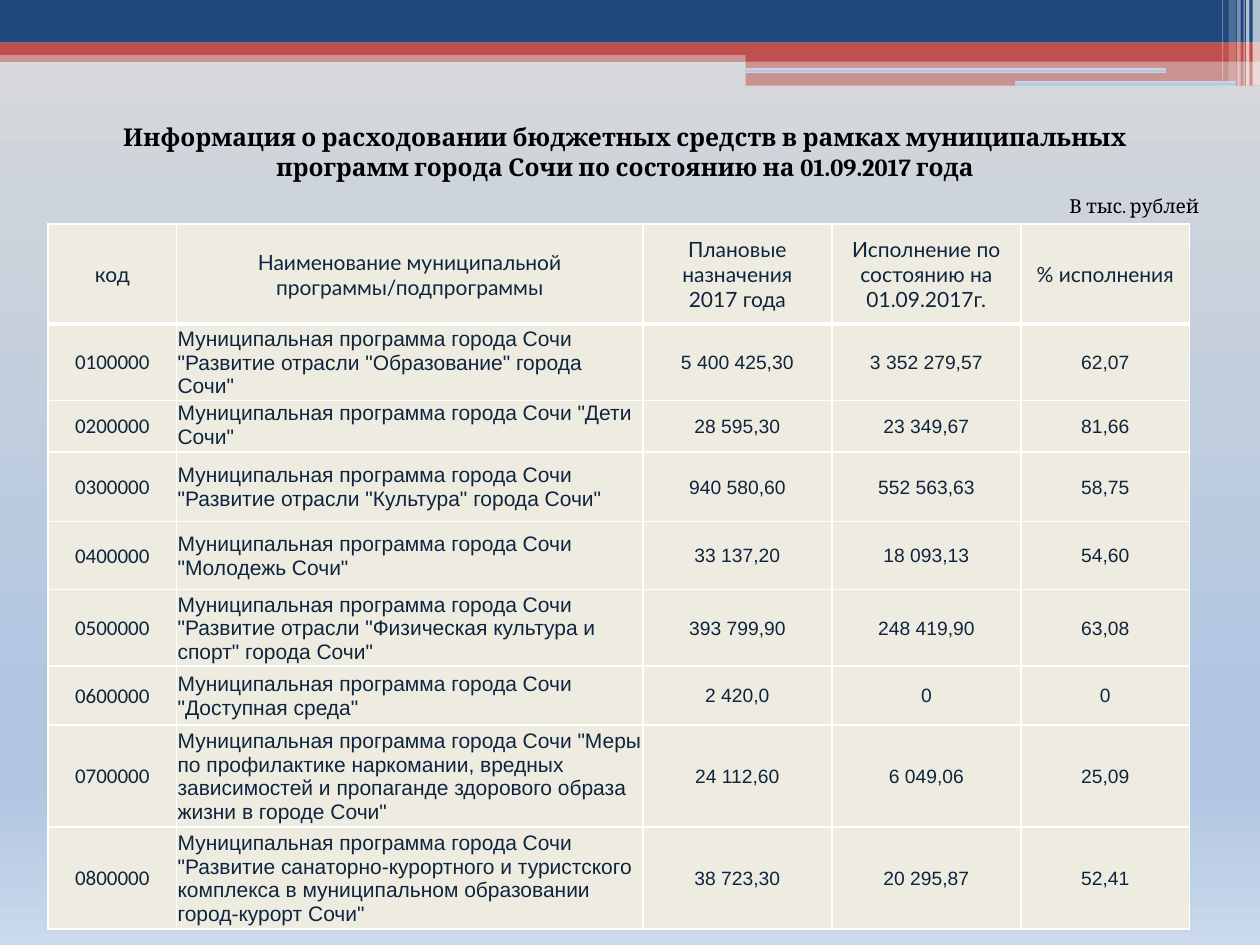
from lxml import etree
from pptx import Presentation
from pptx.dml.color import RGBColor
from pptx.enum.shapes import MSO_SHAPE
from pptx.enum.text import MSO_ANCHOR, MSO_AUTO_SIZE, PP_ALIGN
from pptx.oxml.ns import qn
from pptx.util import Cm, Pt

RECTANGLE, ROUNDED = MSO_SHAPE.RECTANGLE, MSO_SHAPE.ROUNDED_RECTANGLE
LEFT, CENTER = PP_ALIGN.LEFT, PP_ALIGN.CENTER
TOP, MIDDLE = MSO_ANCHOR.TOP, MSO_ANCHOR.MIDDLE
GROW = MSO_AUTO_SIZE.SHAPE_TO_FIT_TEXT

COLORS = {
    "blue": "1F497D", "red": "C0504D", "white": "FFFFFF", "black": "000000",
    "cream": "EEECE1", "navy": "0F243E",
    "grey": "D9D9D9", "sky": "B0C6E1", "pale": "CAD9EB",
}
BACKDROP = [(0, "grey"), (74, "sky"), (83, "sky"), (100, "pale")]

BANDS = [
    (0, 1.02, 25.4, 0.23, "red", 50),
    (0, 0, 25.4, 0.86, "blue", 100),
    (0, 0.86, 25.4, 0.25, "red", 100),
    (15.03, 0.99, 10.37, 0.25, "red", 100),
    (15.03, 1.23, 10.37, 0.5, "red", 50),
]
SLOTS = [(15.01, 1.37, 8.51, 0.09), (20.47, 1.63, 4.45, 0.1)]
STRIPES = [
    (25.25, 0.15, 1.73, 65), (25.12, 0.07, 1.73, 65), (25.07, 0.02, 1.73, 60),
    (24.94, 0.07, 1.73, 40), (24.77, 0.15, 1.63, 20), (24.64, 0.02, 1.63, 30),
]

TITLE = ("Информация о расходовании бюджетных средств в рамках муниципальных "
         "программ города Сочи по состоянию на 01.09.2017 года")
HEADERS = ["код", "Наименование муниципальной программы/подпрограммы",
           "Плановые\vназначения\v2017 года",
           "Исполнение по состоянию на 01.09.2017г.", "% исполнения"]
PROGRAMS = [
    ("0100000", '"Развитие отрасли "Образование" города Сочи"',
     "5 400 425,30", "3 352 279,57", "62,07"),
    ("0200000", '"Дети Сочи"', "28 595,30", "23 349,67", "81,66"),
    ("0300000", '"Развитие отрасли "Культура" города Сочи"',
     "940 580,60", "552 563,63", "58,75"),
    ("0400000", '"Молодежь Сочи"', "33 137,20", "18 093,13", "54,60"),
    ("0500000", '"Развитие отрасли "Физическая культура и спорт" города Сочи"',
     "393 799,90", "248 419,90", "63,08"),
    ("0600000", '"Доступная среда"', "2 420,0", "0", "0"),
    ("0700000", '"Меры по профилактике наркомании, вредных зависимостей и '
     'пропаганде здорового образа жизни в городе Сочи"',
     "24 112,60", "6 049,06", "25,09"),
    ("0800000", '"Развитие санаторно-курортного и туристского комплекса в '
     'муниципальном образовании город-курорт Сочи"',
     "38 723,30", "20 295,87", "52,41"),
]
COLUMN_WIDTHS = [2.59, 9.4, 3.81, 3.81, 3.4]
ROW_HEIGHTS = [2.01, 1.45, 1.04, 1.4, 1.37, 1.45, 1.19, 1.92, 2.01]


def rgb(name):
    """Return the named palette colour."""
    return RGBColor.from_string(COLORS[name])


def fill_backdrop(fill, element):
    """Give a fill the vertical backdrop gradient."""
    fill.gradient()
    fill.gradient_angle = 270
    stops = next(element.iter(qn("a:gsLst")))
    for stop in list(stops):
        stops.remove(stop)
    for position, name in BACKDROP:
        stop = etree.SubElement(stops, qn("a:gs"), pos=str(position * 1000))
        etree.SubElement(stop, qn("a:srgbClr"), val=COLORS[name])


def add_bar(slide, kind, left, top, width, height):
    """Add a flat shape without line or shadow."""
    bar = slide.shapes.add_shape(kind, Cm(left), Cm(top), Cm(width), Cm(height))
    bar.shadow.inherit = False
    bar.line.fill.background()
    return bar


def add_tinted_bar(slide, left, top, width, height, color, opacity):
    """Add a rectangle of one colour at an opacity in percent."""
    bar = add_bar(slide, RECTANGLE, left, top, width, height)
    bar.fill.solid()
    bar.fill.fore_color.rgb = rgb(color)
    if opacity < 100:
        tint = next(bar.element.spPr.iter(qn("a:srgbClr")))
        etree.SubElement(tint, qn("a:alpha"), val=str(opacity * 1000))


def add_banner(slide, left, top):
    """Place the bands, slots and stripes across the top."""
    for x, y, width, height, color, opacity in BANDS:
        add_tinted_bar(slide, left + x, top + y, width, height, color, opacity)
    for x, y, width, height in SLOTS:
        slot = add_bar(slide, ROUNDED, left + x, top + y, width, height)
        fill_backdrop(slot.fill, slot.element)
    for x, width, height, opacity in STRIPES:
        add_tinted_bar(slide, left + x, top, width, height, "white", opacity)


def format_text(frame, font, size, color, align, bold=False):
    """Format every run in a text frame."""
    for para in frame.paragraphs:
        para.alignment = align
        for span in para.runs:
            span.font.name = font
            span.font.size = Pt(size)
            span.font.bold = bold
            span.font.color.rgb = rgb(color)


def place_text(box, text, left, top, width, height):
    """Put text in a box that sits at the given place."""
    box.left, box.top = Cm(left), Cm(top)
    box.width, box.height = Cm(width), Cm(height)
    frame = box.text_frame
    frame.text = text
    frame.word_wrap = True
    frame.auto_size = GROW
    frame.vertical_anchor = TOP
    return frame


def add_heading(slide, left, top, width):
    """Place the title and the unit note below it."""
    title = place_text(slide.shapes.title, TITLE, left, top, width, 1.45)
    format_text(title, "Cambria", 14, "black", CENTER, bold=True)
    note_box = slide.shapes.add_textbox(0, 0, 0, 0)
    note = place_text(note_box, "В тыс. рублей", left + 20.01, top + 1.45, 3.99, 0.74)
    format_text(note, "Cambria", 11, "black", LEFT)


def set_borders(cell, widths):
    """Draw white borders with a width in points for each side."""
    properties = cell._tc.get_or_add_tcPr()
    for index, (side, width) in enumerate(widths.items()):
        line = etree.Element(qn(f"a:ln{side}"), w=str(Pt(width)))
        fill = etree.SubElement(line, qn("a:solidFill"))
        etree.SubElement(fill, qn("a:srgbClr"), val=COLORS["white"])
        properties.insert(index, line)


def fill_cell(cell, text, font, size, align, top_line, bottom_line):
    """Write and format one table cell."""
    cell.text = text
    cell.margin_left = cell.margin_right = cell.margin_top = Cm(0.02)
    cell.margin_bottom = Cm(0)
    cell.vertical_anchor = MIDDLE
    cell.fill.solid()
    cell.fill.fore_color.rgb = rgb("cream")
    format_text(cell.text_frame, font, size, "navy", align)
    set_borders(cell, {"L": 1, "R": 1, "T": top_line, "B": bottom_line})


def add_program_table(slide, left, top):
    """Place the table of programme spending."""
    frame = slide.shapes.add_table(
        len(ROW_HEIGHTS), len(COLUMN_WIDTHS), Cm(left), Cm(top),
        Cm(sum(COLUMN_WIDTHS)), Cm(sum(ROW_HEIGHTS)))
    table = frame.table
    table.horz_banding = False
    for column, width in zip(table.columns, COLUMN_WIDTHS):
        column.width = Cm(width)
    for row, height in zip(table.rows, ROW_HEIGHTS):
        row.height = Cm(height)
    for column, header in enumerate(HEADERS):
        fill_cell(table.cell(0, column), header, "Lato", 12, CENTER, 1, 3)
    styles = [("Calibri", 12, CENTER), ("Arial", 12, LEFT)] + [("Arial", 11, CENTER)] * 3
    for row, (code, name, *amounts) in enumerate(PROGRAMS, 1):
        values = [code, f"Муниципальная программа города Сочи {name}", *amounts]
        if code == "0600000":
            values[1] = f"Муниципальная программа города Сочи {name}"
        for column, (value, style) in enumerate(zip(values, styles)):
            fill_cell(table.cell(row, column), value, *style, 3 if row == 1 else 1, 1)
    table.cell(2, 1).vertical_anchor = TOP


def main():
    """Build and save the deck."""
    deck = Presentation()
    deck.slide_width, deck.slide_height = Cm(25.4), Cm(19.05)
    slide = deck.slides.add_slide(deck.slide_layouts.get_by_name("Title Only"))
    fill_backdrop(slide.background.fill, slide.element)
    add_banner(slide, 0, 0)
    add_program_table(slide, 0.97, 4.52)
    add_heading(slide, 1.3, 2.34, 22.61)
    deck.save("out.pptx")


if __name__ == "__main__":
    main()
